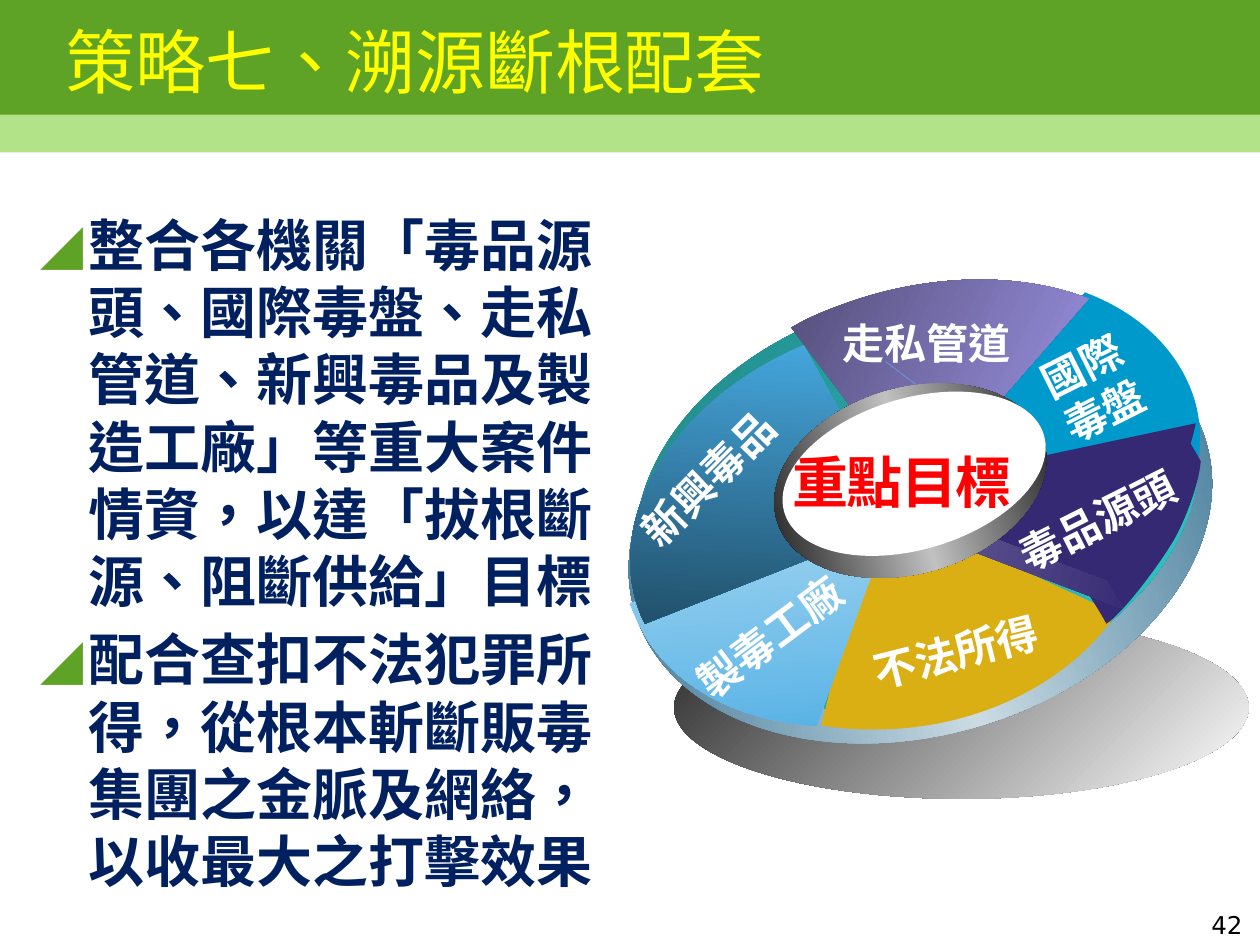
import math
from dataclasses import dataclass

from lxml import etree
from pptx import Presentation
from pptx import util as u
from pptx.dml import color
from pptx.enum import shapes, text
from pptx.oxml import ns


@dataclass(frozen=True)
class Theme:
    banner: str = "5FA326"
    band: str = "B2E389"
    title: str = "FFFF00"
    body: str = "002060"
    goal: str = "FF0000"
    white: str = "FFFFFF"
    black: str = "000000"
    gold: str = "D9AF13"
    cyan: str = "0099CC"
    indigo: str = "352973"
    seam: str = "6A93DE"
    shadow: tuple = ("292929", "FFFFFF")
    rim: tuple = ("29698D", "CBDBE3", "29698D")
    teal: tuple = ("208282", "33CCCC")
    sky: tuple = ("ABD9F2", "47ABE3")
    violet: tuple = ("4F4A73", "AAA0F8")
    ocean: tuple = ("47ABE3", "214F69")
    fold: tuple = ("6A6198", "352973")
    steel: tuple = ("000000", "C1C1C1", "000000")
    title_size: int = 40
    large_size: int = 32
    label_size: int = 24
    number_size: int = 14
    latin_font: str = "Arial"
    label_font: str = "Noto Sans CJK SC"
    number_font: str = "DejaVu Sans"


def rotate(point, degrees):
    angle = math.radians(degrees)
    x, y = point
    return (x * math.cos(angle) - y * math.sin(angle),
            x * math.sin(angle) + y * math.cos(angle))


def bend(shape, segments):
    """Turn each run of three line points into one cubic curve."""
    lines = iter(shape.element.findall(".//" + ns.qn("a:lnTo")))
    for segment in segments:
        group = [next(lines) for _ in segment]
        if len(group) == 3:
            curve = etree.Element(ns.qn("a:cubicBezTo"))
            group[0].addprevious(curve)
            for line in group:
                curve.append(line[0])
                line.getparent().remove(line)


class SlideBuilder:
    def __init__(self, slide, theme):
        self.slide = slide
        self.theme = theme

    def paint(self, shape, fill, angle=0):
        """Fill with one colour, or with a gradient when given several."""
        shape.shadow.inherit = False
        shape.line.fill.background()
        if isinstance(fill, str):
            shape.fill.solid()
            shape.fill.fore_color.rgb = color.RGBColor.from_string(fill)
            return
        shape.fill.gradient()
        shape.fill.gradient_angle = (360 - angle) % 360
        stops = shape.element.find(".//" + ns.qn("a:gsLst"))
        for stop in list(stops):
            stops.remove(stop)
        for index, value in enumerate(fill):
            position = str(100000 * index // (len(fill) - 1))
            stop = etree.SubElement(stops, ns.qn("a:gs"), pos=position)
            etree.SubElement(stop, ns.qn("a:srgbClr"), val=value)

    def preset(self, kind, box, fill, rotation=0, angle=0):
        shape = self.slide.shapes.add_shape(kind, *map(u.Inches, box))
        shape.rotation = rotation
        self.paint(shape, fill, angle)

    def outline(self, start, segments, rotation=0, closed=True):
        """Build a rotated freeform whose turned corners land on the points.

        A segment of one point is a line; one of three points is a curve.
        """
        points = [start, *(point for segment in segments for point in segment)]
        flat = [rotate(point, -rotation) for point in points]
        emu = [(u.Inches(x), u.Inches(y)) for x, y in flat]
        builder = self.slide.shapes.build_freeform(*emu[0])
        builder.add_line_segments(emu[1:], close=closed)
        shape = builder.convert_to_shape()
        center = (shape.left + shape.width / 2, shape.top + shape.height / 2)
        x, y = rotate(center, rotation)
        shape.left = round(x - shape.width / 2)
        shape.top = round(y - shape.height / 2)
        shape.rotation = rotation
        bend(shape, segments)
        return shape

    def sector(self, fill, rotation, start, *segments, angle=45):
        self.paint(self.outline(start, segments, rotation), fill, angle)

    def seam(self, rotation, start, *segments):
        shape = self.outline(start, segments, rotation, closed=False)
        shape.shadow.inherit = False
        shape.fill.background()
        shape.line.color.rgb = color.RGBColor.from_string(self.theme.seam)
        shape.line.width = u.Pt(0.5)

    def run(self, paragraph, words, size, font, ink, bold=False, spacing=0):
        run = paragraph.add_run()
        run.text = words
        run.font.size = u.Pt(size)
        run.font.bold = bold
        run.font.name = font
        run.font.color.rgb = color.RGBColor.from_string(ink)
        properties = run.font._element
        properties.set("lang", "zh-TW")
        etree.SubElement(properties, ns.qn("a:ea"), typeface=font)
        if spacing:
            properties.set("spc", str(spacing * 100))

    def text_box(self, box, rotation=0):
        shape = self.slide.shapes.add_textbox(*map(u.Inches, box))
        shape.rotation = rotation
        shape.text_frame.word_wrap = True
        return shape.text_frame

    def label(self, words, box, rotation=0, size=None, ink=None, spacing=0):
        size = size or self.theme.label_size
        frame = self.text_box(box, rotation)
        frame.auto_size = text.MSO_AUTO_SIZE.SHAPE_TO_FIT_TEXT
        paragraph = frame.paragraphs[0]
        paragraph.line_spacing = u.Pt(size * 1.19)
        self.run(paragraph, words, size, self.theme.label_font,
                 ink or self.theme.white, True, spacing)

    def page_number(self, words, box):
        paragraph = self.text_box(box).paragraphs[0]
        paragraph.alignment = text.PP_ALIGN.RIGHT
        self.run(paragraph, words, self.theme.number_size,
                 self.theme.number_font, self.theme.black)

    def placeholder(self, index, box, anchor):
        """Move a placeholder in front of everything drawn so far."""
        shape = self.slide.placeholders[index]
        shape.left, shape.top, shape.width, shape.height = map(u.Inches, box)
        shape.element.getparent().append(shape.element)
        frame = shape.text_frame
        frame.auto_size = text.MSO_AUTO_SIZE.NONE
        frame.vertical_anchor = anchor
        return frame

    def title(self, words, box):
        frame = self.placeholder(0, box, text.MSO_ANCHOR.MIDDLE)
        paragraph = frame.paragraphs[0]
        paragraph.alignment = text.PP_ALIGN.LEFT
        self.run(paragraph, words, self.theme.title_size,
                 self.theme.latin_font, self.theme.title)

    def bullets(self, items, box):
        frame = self.placeholder(1, box, text.MSO_ANCHOR.TOP)
        frame.margin_right = u.Inches(0.2)
        for index, words in enumerate(items):
            paragraph = frame.add_paragraph() if index else frame.paragraphs[0]
            paragraph.line_spacing = u.Pt(38.4)
            paragraph.space_before = u.Pt(6.4)
            properties = paragraph._p.get_or_add_pPr()
            properties.set("marL", str(u.Inches(0.38)))
            properties.set("indent", str(u.Inches(-0.38)))
            tint = etree.SubElement(properties, ns.qn("a:buClr"))
            etree.SubElement(tint, ns.qn("a:srgbClr"), val=self.theme.banner)
            etree.SubElement(properties, ns.qn("a:buChar"), char="◢")
            self.run(paragraph, words, self.theme.large_size,
                     self.theme.latin_font, self.theme.body, True)


def draw_wheel(builder, theme):
    ellipse = shapes.MSO_SHAPE.OVAL
    tilt = 343.4
    builder.preset(ellipse, (5.35, 4.89, 4.56, 1.45), theme.shadow, angle=45)
    builder.preset(ellipse, (4.94, 2.53, 4.73, 3.3), theme.rim, tilt)
    builder.preset(ellipse, (5, 2.37, 4.56, 3.2), theme.teal, tilt, 45)

    builder.sector(theme.gold, 0, (8.86, 4.87), ((8.47, 5.44), (7.73, 5.79), (6.94, 5.79)),
                   ((6.8, 5.79), (6.66, 5.78), (6.52, 5.76)), ((6.94, 3.98),))
    builder.sector(theme.cyan, tilt, (8.61, 2.32), ((9.06, 2.49), (9.36, 2.79), (9.48, 3.17)),
                   ((9.54, 3.37), (9.54, 3.59), (9.48, 3.81)), ((7.24, 3.83),))
    builder.sector(theme.sky, 335.4, (5, 4.79), ((5.02, 4.84), (5.04, 4.88), (5.06, 4.93)),
                   ((5.28, 5.41), (5.81, 5.72), (6.48, 5.76)), ((7.13, 3.98),), angle=110)
    builder.sector(theme.violet, 341.3, (6.28, 2.6), ((6.43, 2.51), (6.59, 2.45), (6.76, 2.39)),
                   ((7.41, 2.17), (8.1, 2.16), (8.64, 2.37)), ((7.28, 3.93),))
    builder.sector(theme.ocean, tilt, (6.38, 2.74), ((5.39, 3.16), (4.83, 4.03), (5.05, 4.78)),
                   ((5.07, 4.84), (5.09, 4.9), (5.12, 4.95)), ((7.15, 4.15),), angle=110)
    builder.seam(tilt, (8.46, 4.16), ((8.39, 3.91),), ((7.03, 2.87),))
    builder.sector(theme.indigo, 333.9, (9.49, 3.36),
                   ((9.41, 3.78), (9.12, 4.24), (8.67, 4.64)), ((7.05, 3.88),))
    builder.sector(theme.indigo, 331, (8.62, 4.68), ((9.38, 3.4),), ((9.53, 3.66),),
                   ((9.52, 3.8), (9.44, 4.06), (9.32, 4.28)),
                   ((9.19, 4.5), (8.9, 4.88), (8.78, 4.95)),
                   ((8.73, 4.85), (8.65, 4.74), (8.62, 4.68)))
    builder.sector(theme.fold, 331.7, (8.78, 4.61), ((8.91, 4.83),), ((7.36, 4.24),),
                   ((7.22, 4.02),))

    builder.preset(ellipse, (6.12, 3.08, 2.21, 1.47), theme.steel, tilt)
    builder.preset(ellipse, (6.18, 3.16, 2.15, 1.2), theme.white, tilt)
    builder.label("重點目標", (6.19, 3.51, 1.98, 0.64), size=theme.large_size,
                  ink=theme.goal, spacing=-1)
    for words, box, rotation in (
        ("國際毒盤", (8.23, 2.56, 1.18, 0.91), 333.4),
        ("走私管道", (6.59, 2.47, 1.73, 0.51), 0),
        ("製毒工廠", (5.33, 4.75, 1.71, 0.51), 323.2),
        ("新興毒品", (4.81, 3.43, 1.86, 0.51), 314.6),
        ("不法所得", (6.82, 4.91, 1.64, 0.51), 345.7),
        ("毒品源頭", (7.94, 3.85, 1.66, 0.5), 333.3),
    ):
        builder.label(words, box, rotation)


def main():
    presentation = Presentation()
    presentation.slide_width, presentation.slide_height = u.Inches(10), u.Inches(7.5)
    theme = Theme()
    builder = SlideBuilder(presentation.slides.add_slide(presentation.slide_layouts[1]), theme)
    builder.preset(shapes.MSO_SHAPE.RECTANGLE, (0, 0.87, 10, 0.34), theme.band)
    builder.preset(shapes.MSO_SHAPE.RECTANGLE, (0, 0, 10, 0.91), theme.banner)
    draw_wheel(builder, theme)
    builder.title("策略七、溯源斷根配套", (0.42, 0.17, 9.23, 0.62))
    builder.bullets((
        "整合各機關「毒品源頭、國際毒盤、走私管道、新興毒品及製造工廠」等重大案件情資，以達「拔根斷源、阻斷供給」目標",
        "配合查扣不法犯罪所得，從根本斬斷販毒集團之金脈及網絡，以收最大之打擊效果",
    ), (0.22, 1.62, 5.02, 5.59))
    builder.page_number("42", (7.63, 7.17, 2.33, 0.26))
    presentation.save("out.pptx")


if __name__ == "__main__":
    main()
